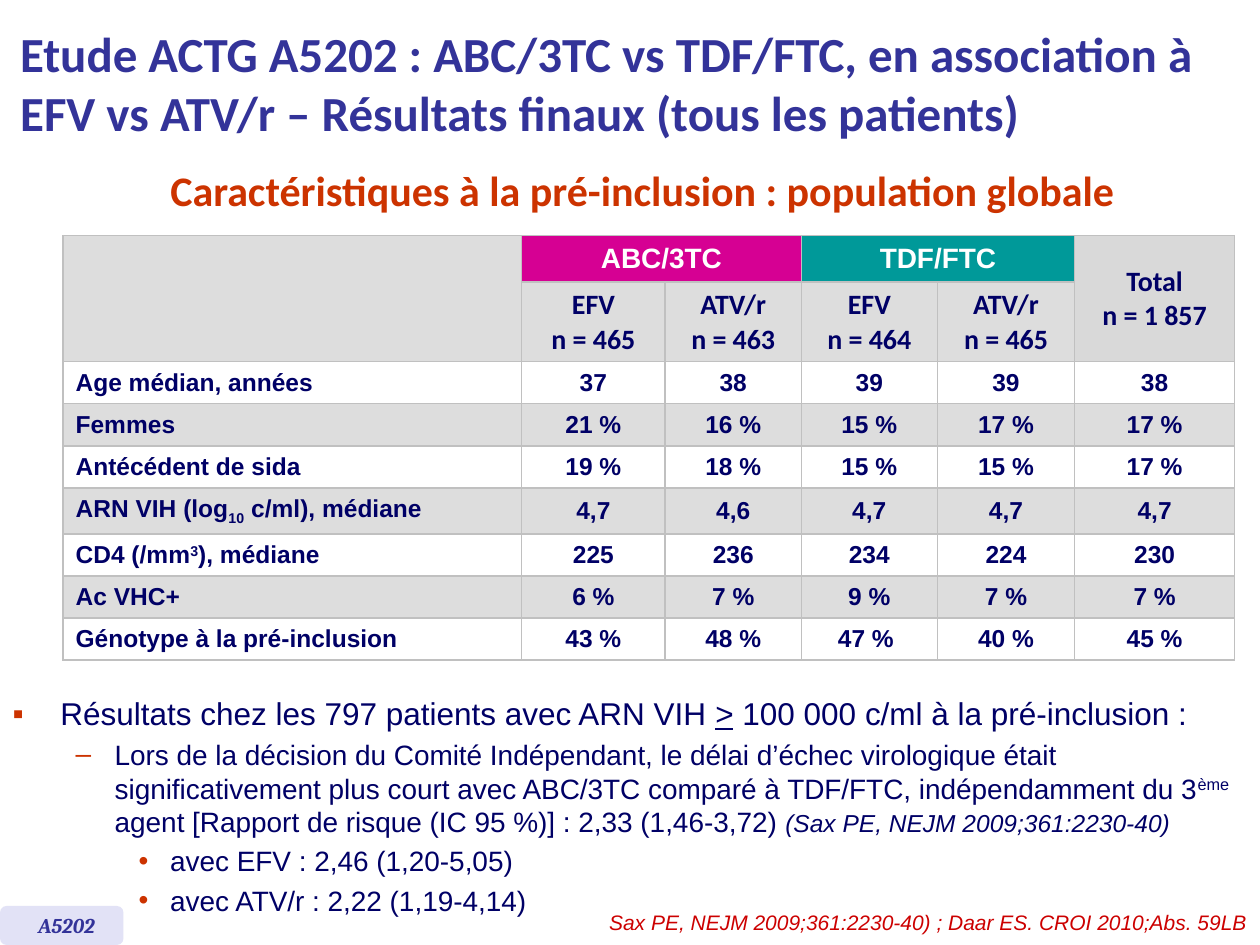
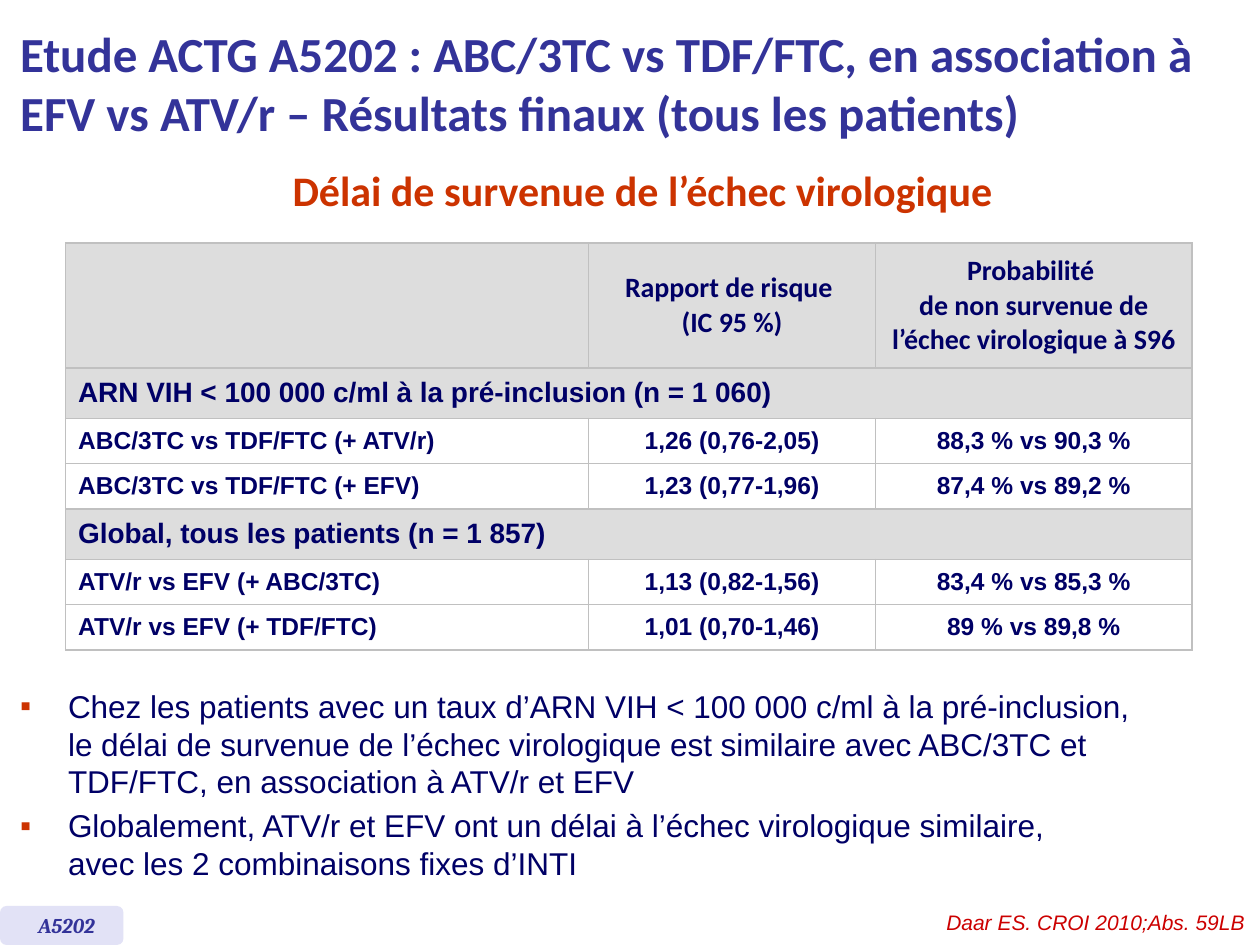
from lxml import etree
from pptx import Presentation
from pptx.dml.color import RGBColor
from pptx.enum.shapes import MSO_SHAPE
from pptx.enum.text import MSO_ANCHOR, MSO_AUTO_SIZE, PP_ALIGN
from pptx.oxml.ns import qn
from pptx.util import Inches, Pt

LEFT, MID, RIGHT = PP_ALIGN.LEFT, PP_ALIGN.CENTER, PP_ALIGN.RIGHT
CENTER, NONE, ROUND = MSO_ANCHOR.MIDDLE, MSO_AUTO_SIZE.NONE, MSO_SHAPE.ROUNDED_RECTANGLE
NAVY = RGBColor(0x00, 0x00, 0x66)
BLUE = RGBColor(0x33, 0x33, 0x99)
RUST = RGBColor(0xCC, 0x33, 0x00)
RED = RGBColor(0xCC, 0x00, 0x00)
PINK = RGBColor(0xD6, 0x00, 0x93)
TEAL = RGBColor(0x00, 0x99, 0x99)
GREY = RGBColor(0xDD, 0xDD, 0xDD)
ASH = RGBColor(0xD9, 0xD9, 0xD9)
EDGE = RGBColor(0xC0, 0xC0, 0xC0)
PALE = RGBColor(0xE2, 0xE2, 0xF6)
WHITE = RGBColor(0xFF, 0xFF, 0xFF)

W, H = Inches(10), Inches(7.5)
COL, ROW = W // 10, H // 7.5
SHIFT = {"sub": "-25000", "sup": "30000"}
LEVELS = [("▪", 0.38, 0.38, 18), ("–", 0.81, 0.31, 16), ("•", 1.25, 0.25, 16)]
TITLE = ("Etude ACTG A5202 : ABC/3TC vs TDF/FTC, en association à "
         "EFV vs ATV/r – Résultats finaux (tous les patients)")

BASE = {
    "head": "Caractéristiques à la pré-inclusion : population globale",
    "at": (0.5, 1.87),
    "cols": [3.64, 1.14, 1.08, 1.08, 1.09, 1.27],
    "rows": [0.32, 0.55] + [0.32] * 7,
    "cells": [
        ["", "ABC/3TC", "", "TDF/FTC", "", "Total\nn = 1 857"],
        ["", "EFV\nn = 465", "ATV/r\nn = 463", "EFV\nn = 464", "ATV/r\nn = 465", ""],
        ["Age médian, années", "37", "38", "39", "39", "38"],
        ["Femmes", "21 %", "16 %", "15 %", "17 %", "17 %"],
        ["Antécédent de sida", "19 %", "18 %", "15 %", "15 %", "17 %"],
        [[("ARN VIH (log", ""), ("10", "sub"), (" c/ml), médiane", "")],
         "4,7", "4,6", "4,7", "4,7", "4,7"],
        [[("CD4 (/mm", ""), ("3", "sup"), ("), médiane", "")],
         "225", "236", "234", "224", "230"],
        ["Ac VHC+", "6 %", "7 %", "9 %", "7 %", "7 %"],
        ["Génotype à la pré-inclusion", "43 %", "48 %", "47 % ", "40 %", "45 %"],
    ],
    "spans": [(0, 0, 1, 0), (0, 1, 0, 2), (0, 3, 0, 4), (0, 5, 1, 5)],
    "top": {0, 1}, "bands": set(), "grey": {0, 1, 3, 5, 7},
    "tints": {(0, 1): PINK, (0, 3): TEAL, (0, 5): ASH},
    "body": (0, 5.46, 9.97, 1.97),
    "list": [
        (0, [("Résultats chez les 797 patients avec ARN VIH ", ""), (">", "line"),
             (" 100 000 c/ml à la pré-inclusion :", "")]),
        (1, [("Lors de la décision du Comité Indépendant, le délai d’échec virologique "
              "était significativement plus court avec ABC/3TC comparé à TDF/FTC, "
              "indépendamment du 3", ""), ("ème", "sup"),
             (" agent [Rapport de risque (IC 95 %)] : 2,33 (1,46-3,72) ", ""),
             ("(Sax PE, NEJM 2009;361:2230-40)", "cite")]),
        (2, "avec EFV : 2,46 (1,20-5,05)"),
        (2, "avec ATV/r : 2,22 (1,19-4,14)"),
    ],
    "cite": "Sax PE, NEJM 2009;361:2230-40) ; Daar ES. CROI 2010;Abs. 59LB",
    "end": 10,
}
DELAY = {
    "head": "Délai de survenue de l’échec virologique",
    "at": (0.52, 1.93),
    "cols": [4.15, 2.28, 2.51],
    "rows": [0.99] + [0.4, 0.36, 0.36] * 2,
    "cells": [
        ["", "Rapport de risque \v(IC 95 %)",
         "Probabilité \vde non survenue de l’échec virologique à S96"],
        ["ARN VIH < 100 000 c/ml à la pré-inclusion (n = 1 060)", "", ""],
        ["ABC/3TC vs TDF/FTC (+ ATV/r)", "1,26 (0,76-2,05)", "88,3 % vs 90,3 %"],
        ["ABC/3TC vs TDF/FTC (+ EFV)", "1,23 (0,77-1,96)", "87,4 % vs 89,2 %"],
        ["Global, tous les patients (n = 1 857)", "", ""],
        ["ATV/r vs EFV (+ ABC/3TC)", "1,13 (0,82-1,56)", "83,4 % vs 85,3 %"],
        ["ATV/r vs EFV (+ TDF/FTC)", "1,01 (0,70-1,46)", "89 % vs 89,8 %"],
    ],
    "spans": [(1, 0, 1, 2), (4, 0, 4, 2)],
    "top": {0}, "bands": {1, 4}, "grey": {0, 1, 4},
    "tints": {},
    "body": (0.06, 5.4, 9.7, 1.75),
    "list": [
        (0, "Chez les patients avec un taux d’ARN VIH < 100 000 c/ml à la pré-inclusion, \v"
            "le délai de survenue de l’échec virologique est similaire avec ABC/3TC et "
            "TDF/FTC, en association à ATV/r et EFV"),
        (0, "Globalement, ATV/r et EFV ont un délai à l’échec virologique similaire, \v"
            "avec les 2 combinaisons fixes d’INTI"),
    ],
    "cite": "Daar ES. CROI 2010;Abs. 59LB",
    "end": 9.98,
}


def area(x, y, w, h):
    return int(x * COL), int(y * ROW), int(w * COL), int(h * ROW)


def write(par, text, face, size, hue, bold=False, slant=False, align=LEFT):
    if isinstance(text, str):
        par.text = text
    else:
        for part, mark in text:
            run = par.add_run()
            run.text = part
            if mark in SHIFT:
                run._r.get_or_add_rPr().set("baseline", SHIFT[mark])
            elif mark == "line":
                run.font.underline = True
            elif mark == "cite":
                run.font.size, run.font.italic = Pt(14), True
    par.alignment = align
    font = par.font
    font.name, font.size, font.bold, font.italic = face, Pt(size), bold, slant
    font.color.rgb = hue


deck = Presentation()
deck.slide_width, deck.slide_height = W, H

for page in (BASE, DELAY):
    slide = deck.slides.add_slide(deck.slide_layouts[1])
    shapes = slide.shapes

    title = shapes.title
    title.left, title.top, title.width, title.height = area(0.06, 0.05, 9.94, 1.21)
    frame = title.text_frame
    frame.auto_size, frame.vertical_anchor = NONE, CENTER
    write(frame.paragraphs[0], TITLE, "Calibri", 28, BLUE, bold=True)

    head = shapes.add_textbox(*area(1.1, 1.26, 8, 0.5)).text_frame
    head.word_wrap = True
    write(head.paragraphs[0], page["head"], "Calibri", 24, RUST, bold=True, align=MID)

    cols, rows = page["cols"], page["rows"]
    spot = area(*page["at"], sum(cols), sum(rows))
    table = shapes.add_table(len(rows), len(cols), *spot).table
    table.first_row = table.horz_banding = False
    for col, wide in zip(table.columns, cols):
        col.width = int(wide * COL)
    for row, high in zip(table.rows, rows):
        row.height = int(high * ROW)
    for r, line in enumerate(page["cells"]):
        for c, text in enumerate(line):
            cell = table.cell(r, c)
            cell.vertical_anchor = CENTER
            props = cell._tc.get_or_add_tcPr()
            for side in ("a:lnL", "a:lnR", "a:lnT", "a:lnB"):
                edge = etree.SubElement(props, qn(side), w=str(Pt(1)))
                paint = etree.SubElement(edge, qn("a:solidFill"))
                etree.SubElement(paint, qn("a:srgbClr"), val=str(EDGE))
            tint = page["tints"].get((r, c), GREY if r in page["grey"] else WHITE)
            cell.fill.solid()
            cell.fill.fore_color.rgb = tint
            vivid = tint in (PINK, TEAL)
            face = "Calibri" if r in page["top"] and not vivid else "Arial"
            size = 16 if r in page["top"] | page["bands"] else 14
            lines = text.split("\n") if isinstance(text, str) else [text]
            for n, part in enumerate(lines):
                frame = cell.text_frame
                par = frame.add_paragraph() if n else frame.paragraphs[0]
                write(par, part, face, size, WHITE if vivid else NAVY,
                      bold=True, align=MID if c else LEFT)
    for r, c, low, last in page["spans"]:
        table.cell(r, c).merge(table.cell(low, last))

    body = slide.placeholders[1]
    body.left, body.top, body.width, body.height = area(*page["body"])
    frame = body.text_frame
    frame.auto_size = NONE
    for n, (level, text) in enumerate(page["list"]):
        par = frame.add_paragraph() if n else frame.paragraphs[0]
        sign, left, hang, size = LEVELS[level]
        par.level = level
        props = par._p.get_or_add_pPr()
        props.set("marL", str(int(left * COL)))
        props.set("indent", str(int(-hang * COL)))
        paint = etree.SubElement(props, qn("a:buClr"))
        etree.SubElement(paint, qn("a:srgbClr"), val=str(RUST))
        etree.SubElement(props, qn("a:buFont"), typeface="Arial")
        etree.SubElement(props, qn("a:buChar"), char=sign)
        par.space_before = Pt(0.2 * size if n else 0)
        write(par, text, "Arial", size, NAVY)

    badge = shapes.add_shape(ROUND, *area(0, 7.19, 0.98, 0.31))
    badge.shadow.inherit = False
    badge.fill.solid()
    badge.fill.fore_color.rgb = PALE
    badge.line.fill.background()
    frame = badge.text_frame
    frame.margin_left, frame.margin_right = int(0.29 * COL), 0
    frame.word_wrap, frame.vertical_anchor = False, CENTER
    write(frame.paragraphs[0], "A5202", "Cambria", 12, BLUE, bold=True, slant=True)

    foot = shapes.add_textbox(*area(page["end"] - 5.51, 7.17, 5.51, 0.3)).text_frame
    foot.word_wrap = True
    write(foot.paragraphs[0], page["cite"], "Arial", 12, RED, slant=True, align=RIGHT)

deck.save("out.pptx")
